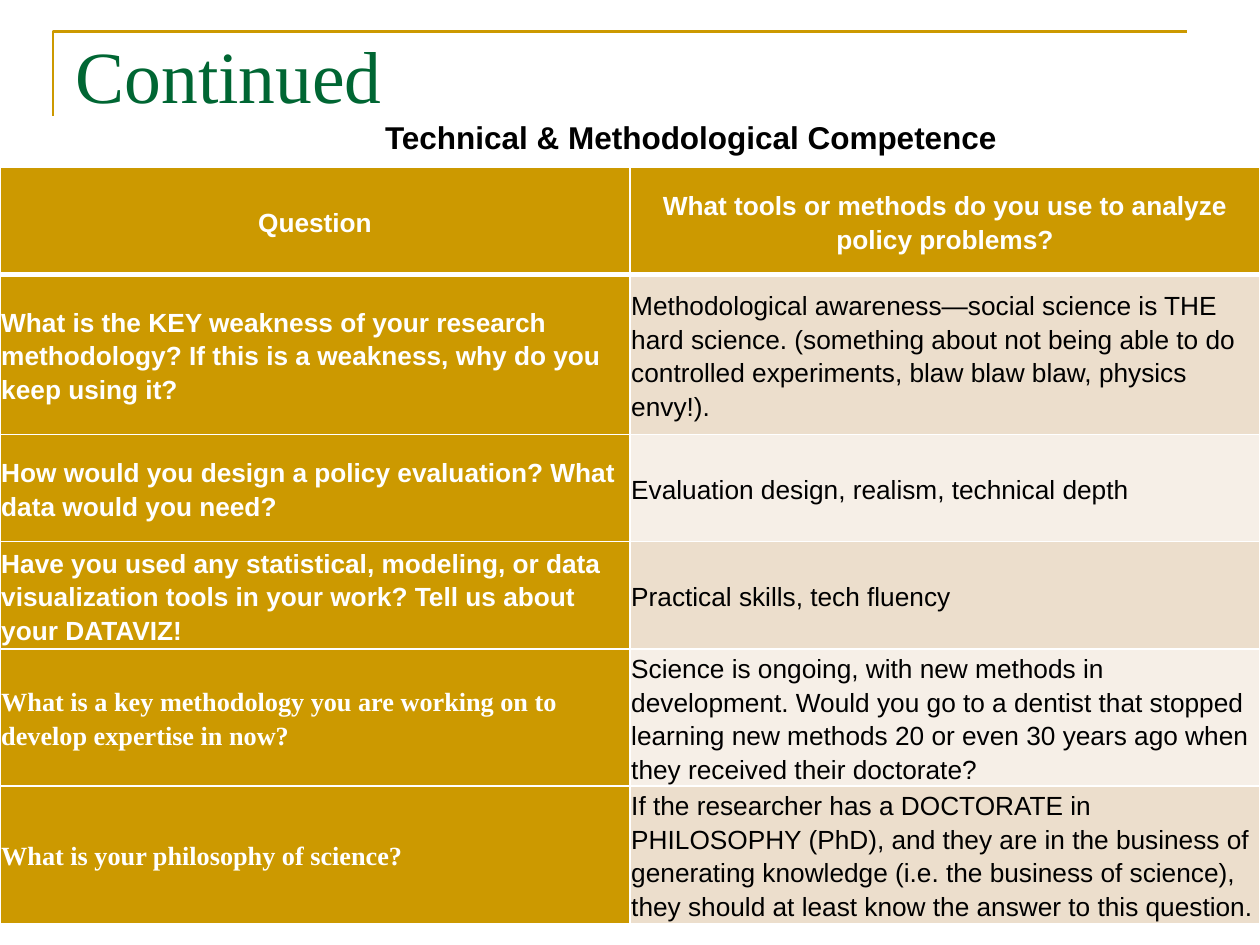
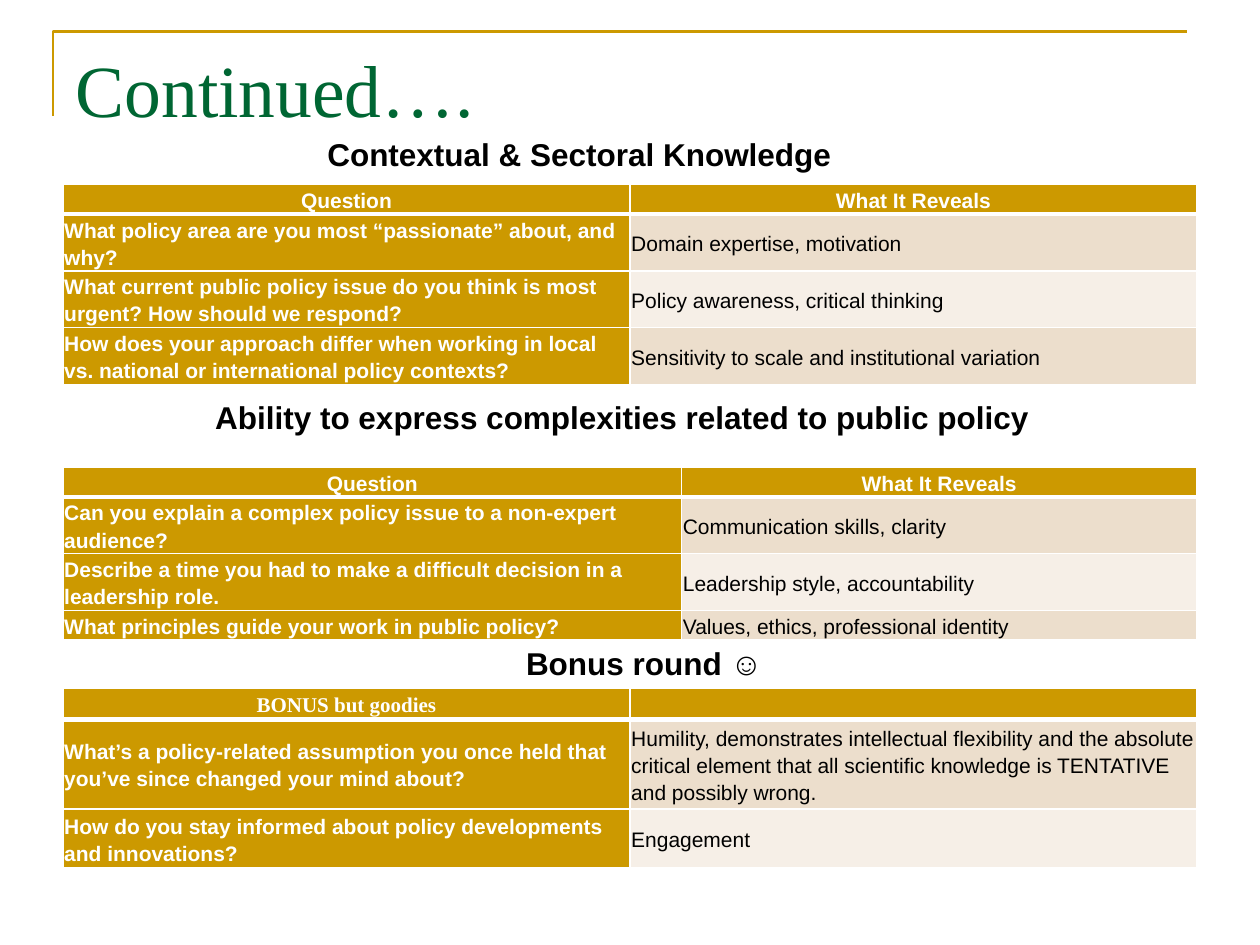
from pptx import Presentation
from pptx.util import Inches, Pt
from pptx.dml.color import RGBColor
from pptx.enum.shapes import MSO_CONNECTOR as CONN
from pptx.enum.text import PP_ALIGN as AL, MSO_ANCHOR as ANC, MSO_AUTO_SIZE as AUTO
from pptx.oxml import parse_xml
from pptx.oxml.ns import nsdecls

GOLD = RGBColor(0xCC, 0x99, 0x00)
GREEN = RGBColor(0x00, 0x66, 0x33)
SAND = RGBColor(0xEC, 0xDE, 0xCC)
CREAM = RGBColor(0xF6, 0xEF, 0xE7)
WHITE = RGBColor(0xFF, 0xFF, 0xFF)
BLACK = RGBColor(0x00, 0x00, 0x00)
SANS, SERIF = "Arial", "Times New Roman"
HEAD = ("Question", "What It Reveals")


def style(para, font, size, color, bold=False, align=AL.LEFT):
    para.alignment = align
    for run in para.runs:
        run.font.name = font
        run.font.size = Pt(size)
        run.font.bold = bold
        run.font.color.rgb = color


def add_grid(slide, left, top, cols, highs, size, rows, serif=()):
    frame = slide.shapes.add_table(len(rows), len(cols), Inches(left), Inches(top),
                                   Inches(sum(cols)), Inches(sum(highs)))
    grid = frame.table
    for c, width in enumerate(cols):
        grid.columns[c].width = Inches(width)
    for r, row in enumerate(rows):
        grid.rows[r].height = Inches(highs[r])
        for c, words in enumerate(row):
            cell = grid.cell(r, c)
            key = r == 0 or c == 0
            cell.margin_left = cell.margin_right = Inches(0.01)
            cell.margin_top = cell.margin_bottom = Inches(0.01)
            cell.vertical_anchor = ANC.MIDDLE
            cell.text_frame.text = words
            para = cell.text_frame.paragraphs[0]
            para.line_spacing = 1.15
            para.font.size = Pt(size)
            style(para, SERIF if words in serif else SANS, size,
                  WHITE if key else BLACK, key, AL.LEFT if r else AL.CENTER)
            cell.fill.solid()
            cell.fill.fore_color.rgb = GOLD if key else SAND if r % 2 else CREAM
            props = cell.fill._xPr
            for n, side in enumerate("LRTB"):
                thick = (side, r) in (("B", 0), ("T", 1))
                props.insert(n, parse_xml(
                    f'<a:ln{side} {nsdecls("a")} w="{Pt(3 if thick else 1)}"><a:solidFill>'
                    f'<a:srgbClr val="{WHITE}"/></a:solidFill></a:ln{side}>'))


tech = [
    ("Question", "What tools or methods do you use to analyze policy problems?"),
    ("What is the KEY weakness of your research methodology? If this is a weakness, "
     "why do you keep using it?",
     "Methodological awareness—social science is THE hard science. (something about not "
     "being able to do controlled experiments, blaw blaw blaw, physics envy!)."),
    ("How would you design a policy evaluation? What data would you need?",
     "Evaluation design, realism, technical depth"),
    ("Have you used any statistical, modeling, or data visualization tools in your work? "
     "Tell us about your DATAVIZ!",
     "Practical skills, tech fluency"),
    ("What is a key methodology you are working on to develop expertise in now?",
     "Science is ongoing, with new methods in development. Would you go to a dentist that "
     "stopped learning new methods 20 or even 30 years ago when they received their doctorate?"),
    ("What is your philosophy of science?",
     "If the researcher has a DOCTORATE in PHILOSOPHY (PhD), and they are in the business of "
     "generating knowledge (i.e. the business of science), they should at least know the "
     "answer to this question."),
]
sector = [
    HEAD,
    ("What policy area are you most “passionate” about, and why?",
     "Domain expertise, motivation"),
    ("What current public policy issue do you think is most urgent? How should we respond?",
     "Policy awareness, critical thinking"),
    ("How does your approach differ when working in local vs. national or international "
     "policy contexts?",
     "Sensitivity to scale and institutional variation"),
]
express = [
    HEAD,
    ("Can you explain a complex policy issue to a non-expert audience?",
     "Communication skills, clarity"),
    ("Describe a time you had to make a difficult decision in a leadership role.",
     "Leadership style, accountability"),
    ("What principles guide your work in public policy?",
     "Values, ethics, professional identity"),
]
bonus = [
    ("BONUS but goodies", ""),
    ("What’s a policy-related assumption you once held that you’ve since changed your mind about?",
     "Humility, demonstrates intellectual flexibility and the absolute critical element that "
     "all scientific knowledge is TENTATIVE and possibly wrong."),
    ("How do you stay informed about policy developments and innovations?", "Engagement"),
]

pages = [
    ("Continued", 0.19,
     [(0, 1.33, (5, 5), (0.85, 1.27, 0.85, 0.85, 1.09, 1.09), 15, tech,
       (tech[4][0], tech[5][0]))],
     [("Technical & Methodological Competence ", 2.95, 0.87, 5.14, 0.44, AL.CENTER)]),
    ("Continued….", 0.3,
     [(0.5, 1.46, (4.5, 4.5), (0.24, 0.45, 0.45, 0.45), 12, sector),
      (0.5, 3.71, (4.91, 4.09), (0.23, 0.45, 0.45, 0.23), 12, express),
      (0.5, 5.46, (4.5, 4.5), (0.25, 0.71, 0.47), 12, bonus, (bonus[0][0],))],
     [("Contextual & Sectoral Knowledge", 2.5, 1.02, 5, 0.4, AL.LEFT),
      ("Ability to express complexities related to public policy",
       1.61, 3.11, 7.04, 0.4, AL.LEFT),
      ("Bonus round ☺ ", 1.63, 5.06, 7.04, 0.4, AL.CENTER)]),
]

deck = Presentation()
deck.slide_width, deck.slide_height = Inches(10), Inches(7.5)

for name, top, grids, heads in pages:
    slide = deck.slides.add_slide(deck.slide_layouts[5])
    shapes = slide.shapes

    pen = shapes.build_freeform(Inches(0.42), Inches(0.92))
    pen.add_line_segments([(Inches(0.42), Inches(0.25)), (Inches(9.42), Inches(0.25))],
                          close=False)
    edge = pen.convert_to_shape()
    edge.shadow.inherit = False
    edge.fill.background()
    base = shapes.add_connector(CONN.STRAIGHT, Inches(0.5), Inches(6.75),
                                Inches(9.5), Inches(6.75))
    base._element.spPr.append(parse_xml(f'<a:effectLst {nsdecls("a")}/>'))
    for rule in (edge, base):
        rule.line.color.rgb = GOLD
        rule.line.width = Pt(1.5)

    title = shapes.title
    title.element.getparent().append(title.element)
    title.left, title.top = Inches(0.5), Inches(top)
    title.width, title.height = Inches(9), Inches(1.25)
    title.text_frame.text = name
    title.text_frame.auto_size = AUTO.NONE
    title.text_frame.vertical_anchor = ANC.TOP
    style(title.text_frame.paragraphs[0], SERIF, 42, GREEN)

    for grid in grids:
        add_grid(slide, *grid)

    for words, left, high, width, tall, align in heads:
        box = shapes.add_textbox(Inches(left), Inches(high), Inches(width), Inches(tall))
        box.text_frame.word_wrap = True
        box.text_frame.vertical_anchor = ANC.MIDDLE
        box.text_frame.text = words
        style(box.text_frame.paragraphs[0], SANS, 18, BLACK, True, align)

deck.save("out.pptx")
